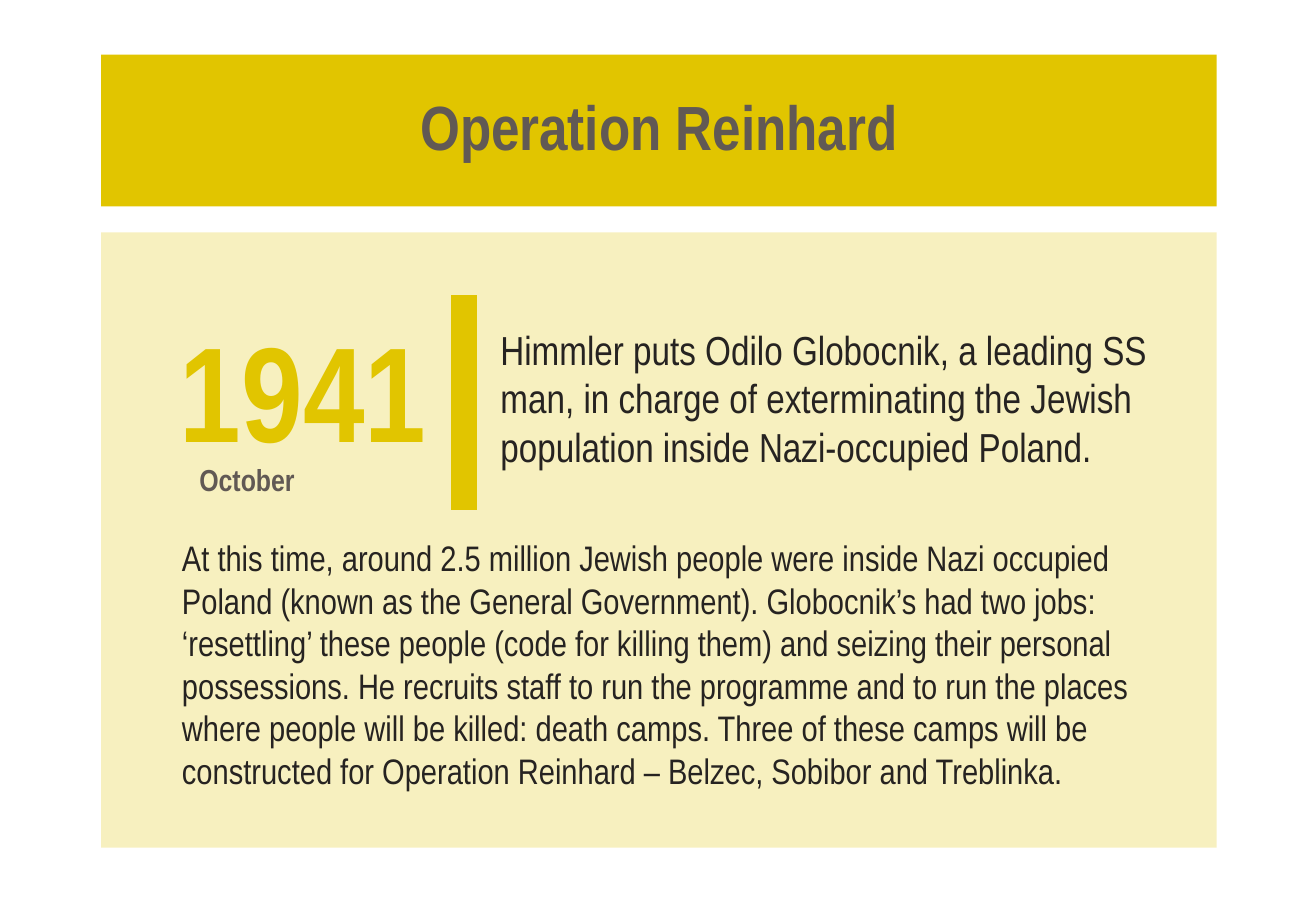
from dataclasses import dataclass

from lxml import etree
from pptx import Presentation, util as u
from pptx.dml.color import RGBColor
from pptx.enum import shapes, text
from pptx.oxml.ns import qn


@dataclass(frozen=True)
class Theme:
    font: str = "Arial Narrow"
    gold: str = "E1C500"
    grey: str = "615954"
    ink: str = "262321"
    panel_opacity: int = 25
    year_size: int = 80
    title_size: int = 37
    lead_size: int = 24
    body_size: int = 21
    month_size: int = 18
    bar_width: int = 15


class SlideBuilder:
    COLUMNS, ROWS = 130, 90

    def __init__(self, presentation, theme):
        self.theme = theme
        self.column = presentation.slide_width / self.COLUMNS
        self.row = presentation.slide_height / self.ROWS
        self.slide = presentation.slides.add_slide(presentation.slide_layouts[6])

    def place(self, left, top, width, height):
        return (round(left * self.column), round(top * self.row),
                round(width * self.column), round(height * self.row))

    def panel(self, area, color, opacity=100):
        shape = self.slide.shapes.add_shape(
            shapes.MSO_SHAPE.RECTANGLE, *self.place(*area))
        shape.shadow.inherit = False
        shape.fill.solid()
        shape.fill.fore_color.rgb = RGBColor.from_string(color)
        shape.line.fill.background()
        if opacity < 100:
            fill_color = shape._element.spPr.find(qn("a:solidFill"))[0]
            etree.SubElement(fill_color, qn("a:alpha"), val=str(opacity * 1000))
        return shape

    def set_text(self, shape, words, size, color, bold=False, spacing=1.0,
                 align=text.PP_ALIGN.LEFT, anchor=text.MSO_ANCHOR.MIDDLE):
        frame = shape.text_frame
        frame.word_wrap = True
        frame.vertical_anchor = anchor
        paragraph = frame.paragraphs[0]
        paragraph.text = words
        paragraph.alignment = align
        paragraph.line_spacing = spacing
        paragraph.font.name = self.theme.font
        paragraph.font.size = u.Pt(size)
        paragraph.font.bold = bold
        paragraph.font.color.rgb = RGBColor.from_string(color)

    def label(self, area, words, size, color, **style):
        shape = self.slide.shapes.add_textbox(*self.place(*area))
        self.set_text(shape, words, size, color, **style)

    def vertical_bar(self, column, top, bottom):
        left, start, _, end = self.place(column, top, 0, bottom)
        bar = self.slide.shapes.add_connector(
            shapes.MSO_CONNECTOR.STRAIGHT, left, start, left, end)
        bar.line.color.rgb = RGBColor.from_string(self.theme.gold)
        bar.line.width = u.Pt(self.theme.bar_width)
        etree.SubElement(bar._element.spPr, qn("a:effectLst"))


def main():
    presentation = Presentation()
    presentation.slide_width = u.Inches(10.83)
    presentation.slide_height = u.Inches(7.5)
    theme = Theme()
    builder = SlideBuilder(presentation, theme)

    builder.panel((10, 22.95, 110.2, 60.8), theme.gold, theme.panel_opacity)
    builder.label((16.6, 28.1, 29.3, 22.6), "1941", theme.year_size,
                  theme.gold, bold=True, spacing=0.9)
    builder.vertical_bar(45.85, 29.15, 50.4)
    builder.label(
        (48.25, 28, 70.6, 22.6),
        "Himmler puts Odilo Globocnik, a leading SS man, in charge of "
        "exterminating the Jewish population inside Nazi-occupied Poland.",
        theme.lead_size, theme.ink)

    title = builder.panel((10, 5.4, 110.2, 15), theme.gold)
    builder.set_text(title, "Operation Reinhard", theme.title_size, theme.grey,
                     bold=True, spacing=0.9, align=text.PP_ALIGN.CENTER)

    builder.label((18.5, 45, 22.8, 4.8), "October", theme.month_size,
                  theme.grey, bold=True, anchor=text.MSO_ANCHOR.TOP)
    builder.label(
        (16.8, 54.3, 101.2, 22.6),
        "At this time, around 2.5 million Jewish people were inside Nazi "
        "occupied Poland (known as the General Government). Globocnik’s had "
        "two jobs: ‘resettling’ these people (code for killing them) and "
        "seizing their personal possessions. He recruits staff to run the "
        "programme and to run the places where people will be killed: death "
        "camps. Three of these camps will be constructed for Operation "
        "Reinhard – Belzec, Sobibor and Treblinka.",
        theme.body_size, theme.ink)

    presentation.save("out.pptx")


if __name__ == "__main__":
    main()
